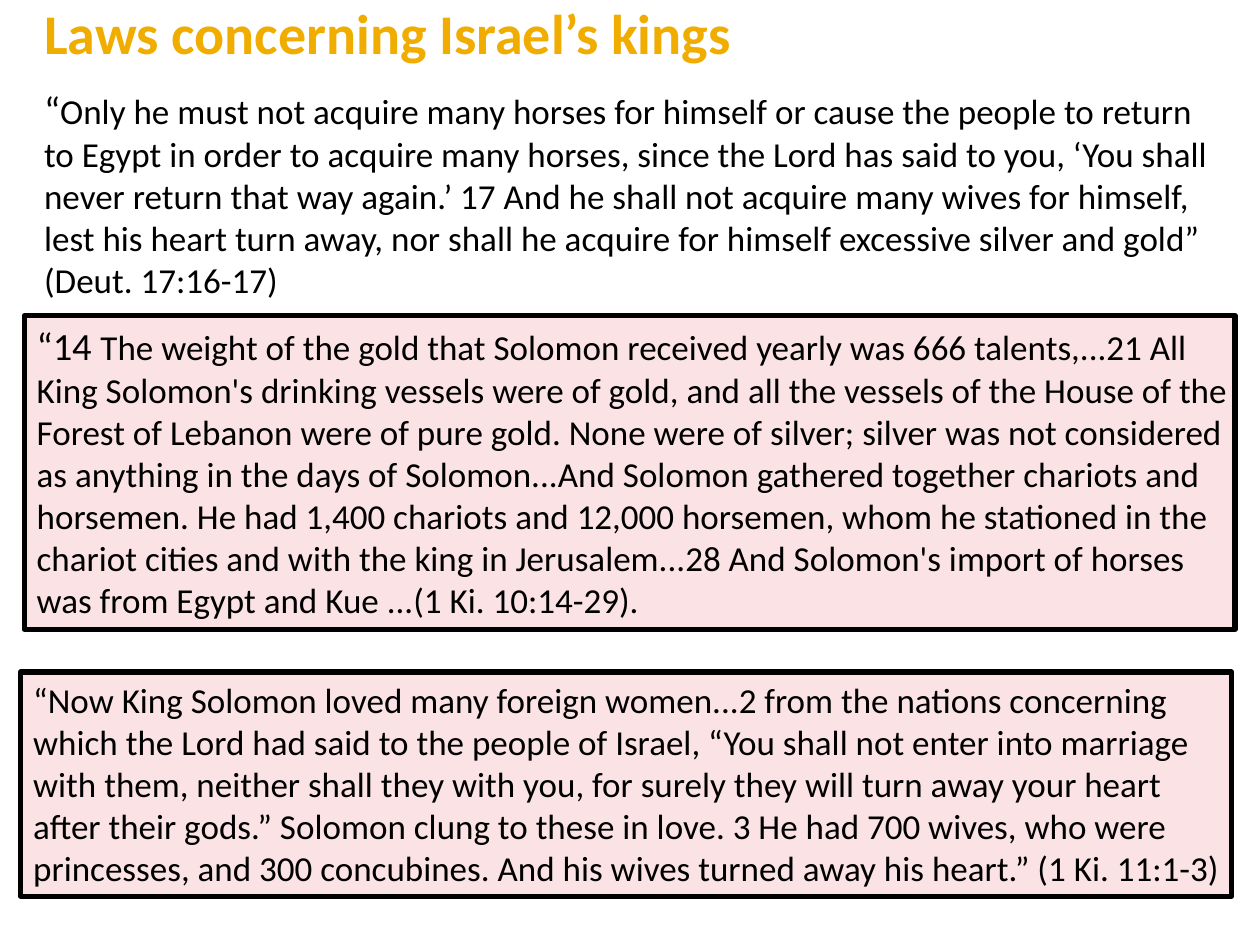
"""Build a slide on the laws concerning Israel's kings."""
from typing import NamedTuple

from pptx import Presentation
from pptx import util as u
from pptx.dml.color import RGBColor
from pptx.enum import shapes, text

WIDTH, HEIGHT = u.Inches(10), u.Inches(7.5)
FONT = "Calibri"
GOLD = RGBColor(0xF0, 0xAD, 0x00)
BLACK = RGBColor(0x00, 0x00, 0x00)
PINK = RGBColor(0xFA, 0xE2, 0xE5)
RIGHT_INSET = u.Inches(0.05)


class Area(NamedTuple):
    """Lengths as percentages of the slide's size."""
    left: float
    top: float
    width: float
    height: float

    def lengths(self) -> tuple[int, ...]:
        """Return the area in slide units."""
        sides = (WIDTH, HEIGHT, WIDTH, HEIGHT)
        return tuple(round(share * side / 100) for share, side in zip(self, sides))


class Words(NamedTuple):
    """A run of text in one size."""
    wording: str
    size: int = 20
    color: RGBColor = BLACK
    bold: bool = False


class Passage(NamedTuple):
    """A quotation, framed or plain."""
    area: Area
    words: tuple[Words, ...]
    framed: bool = True
    insets: tuple[float, float] = (0.1, 0.05)


TITLE_AREA = Area(2.5, -5.73, 90, 18.27)
TITLE = Words("Laws concerning Israel’s kings", 32, GOLD, True)

PASSAGES = (
    Passage(Area(1.9, 7.75, 96.1, 79.47), (
        Words("“", 22),
        Words("Only he must not acquire many horses for himself or cause the people to "
              "return to Egypt in order to acquire many horses, since the Lord has said "
              "to you, ‘You shall never return that way again.’ 17 And he shall not "
              "acquire many wives for himself, lest his heart turn away, nor shall he "
              "acquire for himself excessive silver and gold” (Deut. 17:16-17)"),
    ), framed=False, insets=(0.16, 0.1)),
    Passage(Area(1.93, 33.4, 96.1, 33.2), (
        Words("“14 ", 22),
        Words("The weight of the gold that Solomon received yearly was 666 "
              "talents,...21 All King Solomon's drinking vessels were of gold, and all "
              "the vessels of the House of the Forest of Lebanon were of pure gold. None "
              "were of silver; silver was not considered as anything in the days of "
              "Solomon...And Solomon gathered together chariots and horsemen. He had "
              "1,400 chariots and 12,000 horsemen, whom he stationed in the chariot "
              "cities and with the king in Jerusalem...28 And Solomon's import of horses "
              "was from Egypt and Kue ...(1 Ki. 10:14-29)."),
    )),
    Passage(Area(1.65, 71.1, 96.1, 23.73), (
        Words("“Now King Solomon loved many foreign women...2 from the nations "
              "concerning which the Lord had said to the people of Israel, “You shall "
              "not enter into marriage with them, neither shall they with you, for "
              "surely they will turn away your heart after their gods.” Solomon clung to "
              "these in love. 3 He had 700 wives, who were princesses, and 300 "
              "concubines. And his wives turned away his heart.” (1 Ki. 11:1-3)"),
    )),
)


def write(frame, words: tuple[Words, ...], insets: tuple[float, float],
          anchor: text.MSO_ANCHOR) -> None:
    """Fill a text frame with one left-aligned paragraph."""
    frame.word_wrap = True
    frame.auto_size = text.MSO_AUTO_SIZE.NONE
    frame.vertical_anchor = anchor
    frame.margin_left, frame.margin_top = map(u.Inches, insets)
    frame.margin_right = RIGHT_INSET
    paragraph = frame.paragraphs[0]
    paragraph.alignment = text.PP_ALIGN.LEFT
    for part in words:
        run = paragraph.add_run()
        run.text = part.wording
        run.font.name = FONT
        run.font.size = u.Pt(part.size)
        run.font.bold = part.bold
        run.font.color.rgb = part.color


def draw_title(slide) -> None:
    """Place and format the title."""
    title = slide.shapes.title
    title.left, title.top, title.width, title.height = TITLE_AREA.lengths()
    write(title.text_frame, (TITLE,), (0.1, 0.05), text.MSO_ANCHOR.MIDDLE)


def draw_passage(slide, passage: Passage) -> None:
    """Draw a quotation and, where wanted, its frame."""
    area = passage.area.lengths()
    if passage.framed:
        quotation = slide.shapes.add_shape(shapes.MSO_SHAPE.RECTANGLE, *area)
        quotation.shadow.inherit = False
        quotation.fill.solid()
        quotation.fill.fore_color.rgb = PINK
        quotation.line.color.rgb = BLACK
        quotation.line.width = u.Pt(3)
    else:
        quotation = slide.shapes.add_textbox(*area)
    write(quotation.text_frame, passage.words, passage.insets, text.MSO_ANCHOR.TOP)


def main() -> None:
    """Build and save the presentation."""
    deck = Presentation()
    deck.slide_width, deck.slide_height = WIDTH, HEIGHT
    slide = deck.slides.add_slide(deck.slide_layouts.get_by_name("Title Only"))
    draw_title(slide)
    for passage in PASSAGES:
        draw_passage(slide, passage)
    deck.save("out.pptx")


if __name__ == "__main__":
    main()
